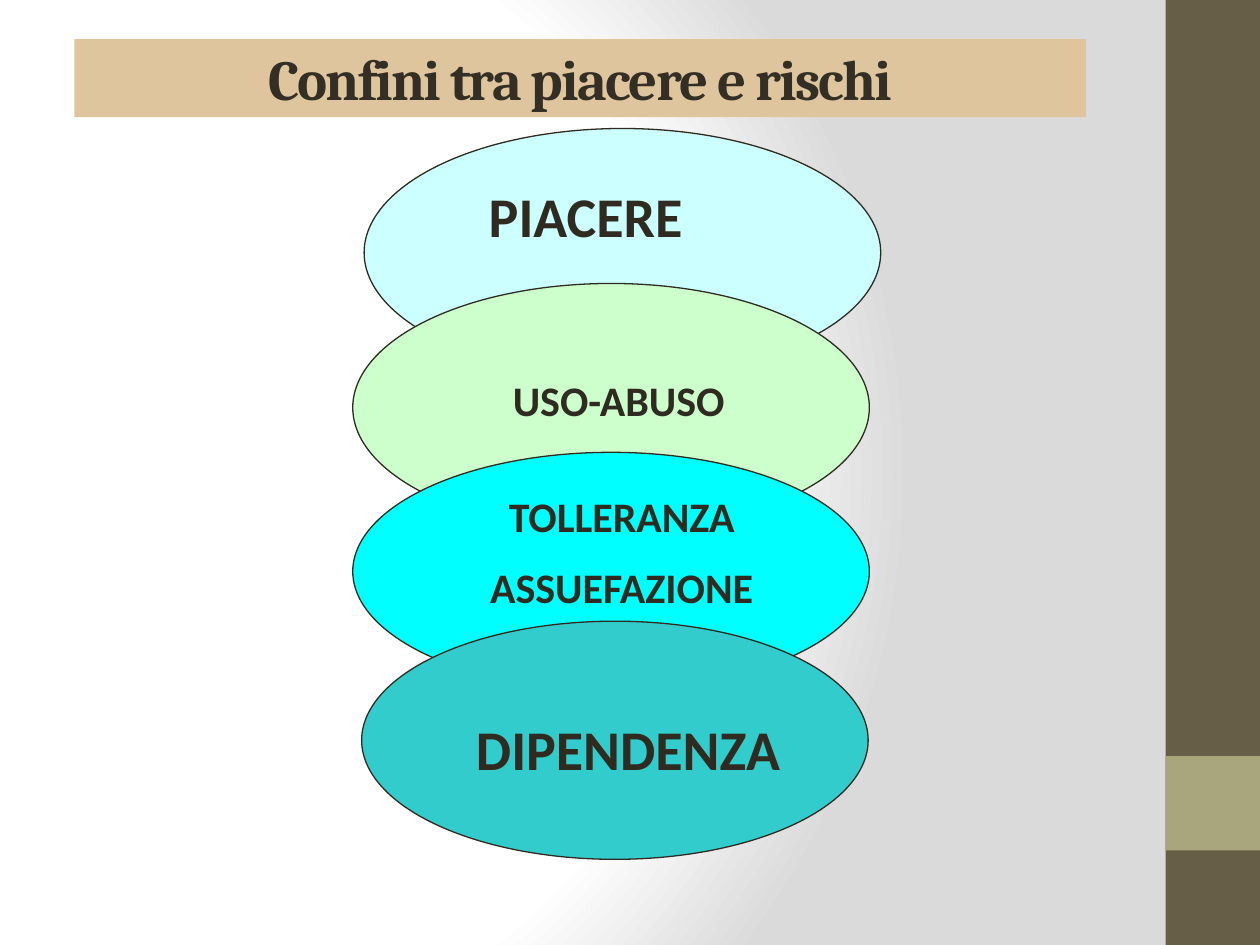
import pptx
import pptx.util
import pptx.dml.color
import pptx.enum.shapes
import pptx.enum.text
import pptx.oxml
import pptx.oxml.ns

RGBColor = pptx.dml.color.RGBColor
SHAPE = pptx.enum.shapes.MSO_SHAPE
INK = RGBColor(0x2F, 0x2B, 0x20)
TITLE_INK = RGBColor(0x34, 0x2F, 0x24)
SAND = RGBColor(0xDE, 0xC5, 0x9E)
BROWN = RGBColor(0x67, 0x5E, 0x47)
OLIVE = RGBColor(0xA9, 0xA5, 0x7C)
PALE_CYAN = RGBColor(0xCC, 0xFF, 0xFF)
PALE_GREEN = RGBColor(0xCC, 0xFF, 0xCC)
CYAN = RGBColor(0x00, 0xFF, 0xFF)
TEAL = RGBColor(0x33, 0xCC, 0xCC)

deck = pptx.Presentation()
deck.slide_width = pptx.util.Inches(10)
deck.slide_height = pptx.util.Inches(7.5)
page = deck.slides.add_slide(deck.slide_layouts[6])

# Grid of 40 columns by 30 rows
COLUMN = deck.slide_width / 40
ROW = deck.slide_height / 30


def add_figure(kind, area, color, outline=None):
    """Add a filled preset shape; area is left, top, width, height on the grid."""
    left, top, width, height = area
    figure = page.shapes.add_shape(kind, int(left * COLUMN), int(top * ROW),
                                   int(width * COLUMN), int(height * ROW))
    figure.shadow.inherit = False
    figure.fill.solid()
    figure.fill.fore_color.rgb = color
    if outline is None:
        figure.line.fill.background()
    else:
        figure.line.color.rgb = outline
        figure.line.width = pptx.util.Pt(0.75)
    return figure


def write_line(para, text, color, format_values):
    para.alignment = pptx.enum.text.PP_ALIGN.CENTER
    span = para.add_run()
    span.text = text
    span.font.color.rgb = color
    for name, value in format_values.items():
        setattr(span.font, name, value)
    return span


# Background: white glow fading to grey on the right
page.background.fill.gradient()
old_gradient = page.element.find(".//" + pptx.oxml.ns.qn("a:gradFill"))
stops = "".join(
    f'<a:gs pos="{share * 1000}"><a:srgbClr val="{color}"/></a:gs>'
    for share, color in [(0, "FFFFFF"), (75, "FFFFFF"), (100, "DADADA")])
glow = pptx.oxml.parse_xml(
    f'<a:gradFill {pptx.oxml.ns.nsdecls("a")} rotWithShape="1"><a:gsLst>{stops}</a:gsLst>'
    '<a:path path="circle"><a:fillToRect l="20000" t="50000" r="100000" b="50000"/>'
    '</a:path></a:gradFill>')
old_gradient.getparent().replace(old_gradient, glow)

# Side band
add_figure(SHAPE.RECTANGLE, (37, 0, 3, 30), BROWN)
add_figure(SHAPE.RECTANGLE, (37, 24, 3, 3), OLIVE)

# Title
title = add_figure(SHAPE.RECTANGLE, (2.36, 1.24, 32.12, 2.48), SAND)
title.text_frame.vertical_anchor = pptx.enum.text.MSO_ANCHOR.MIDDLE
title_span = write_line(title.text_frame.paragraphs[0], "Confini tra piacere e rischi", TITLE_INK,
                        {"name": "Cambria", "size": pptx.util.Pt(32.4), "bold": True})
title_span.font._element.set("spc", "-100")

# Overlapping stages
stages = [
    ((11.56, 4.08, 16.4, 7.88), PALE_CYAN),
    ((11.2, 9, 16.4, 7.88), PALE_GREEN),
    ((11.2, 14.36, 16.4, 7.56), CYAN),
    ((11.48, 19.72, 16.08, 7.56), TEAL),
]
for area, color in stages:
    add_figure(SHAPE.OVAL, area, color, INK)

# Stage names: area, lines, text size, insets (left, top, right) on the grid
labels = [
    ((13.72, 5.56, 11.36, 2.52), ["PIACERE"], 32, (0.4, 0.2, 2)),
    ((13.12, 11.24, 12.24, 2.56), ["USO-ABUSO"], 24, (1.2, 0.64, 0.4)),
    ((13.12, 15.36, 13.24, 4.44), ["TOLLERANZA", "ASSUEFAZIONE"], 24, (0.4, 0.2, 0.4)),
    ((13.12, 22.48, 13.24, 2.56), ["DIPENDENZA"], 32, (0.8, 0.2, 0.4)),
]
for (left, top, width, height), lines, size, insets in labels:
    box = page.shapes.add_textbox(int(left * COLUMN), int(top * ROW),
                                  int(width * COLUMN), int(height * ROW))
    frame = box.text_frame
    frame.word_wrap = True
    frame.margin_left = int(insets[0] * COLUMN)
    frame.margin_top = int(insets[1] * ROW)
    frame.margin_right = int(insets[2] * COLUMN)
    for index, text in enumerate(lines):
        para = frame.add_paragraph() if index else frame.paragraphs[0]
        if index:
            para.space_before = pptx.util.Pt(size / 2)
        write_line(para, text, INK,
                   {"name": "Calibri", "size": pptx.util.Pt(size), "bold": True})

deck.save("out.pptx")
